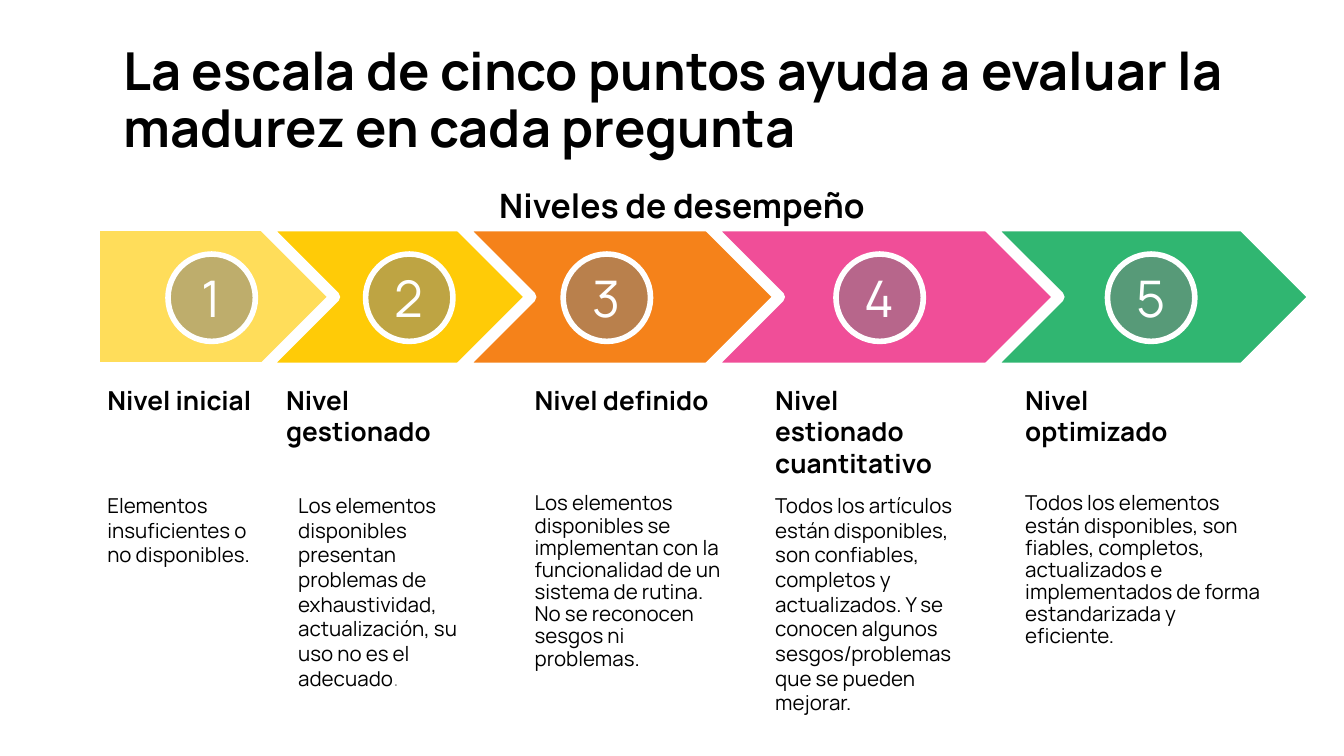
from lxml import etree
from pptx import Presentation
from pptx.dml.color import RGBColor
from pptx.enum.shapes import MSO_SHAPE
from pptx.enum.text import MSO_ANCHOR, PP_ALIGN
from pptx.oxml.ns import qn
from pptx.util import Inches, Pt

FONT = "Manrope"
BLACK = "000000"
WHITE = "FFFFFF"


def color(value):
    return RGBColor.from_string(value)


def add_run(paragraph, text, size, value=BLACK, bold=False):
    run = paragraph.add_run()
    run.text = text
    run.font.name = FONT
    run.font.size = Pt(size)
    run.font.bold = bold
    run.font.color.rgb = color(value)


presentation = Presentation()
presentation.slide_width = Inches(10)
presentation.slide_height = Inches(10 * 9 / 16)
slide = presentation.slides.add_slide(presentation.slide_layouts[6])

arrows = [
    (MSO_SHAPE.RECTANGLE, 0.7, 3.18, "FFCB03", 65),
    (MSO_SHAPE.CHEVRON, 1.96, 2.91, "FFCB07", 100),
    (MSO_SHAPE.CHEVRON, 3.42, 2.41, "F5821A", 100),
    (MSO_SHAPE.CHEVRON, 5.27, 2.66, "F04E98", 100),
    (MSO_SHAPE.CHEVRON, 7.35, 2.43, "30B671", 100),
]
circles = [(MSO_SHAPE.OVAL, left, 0.65, "7F7F7F", 50) for left in (1.25, 2.72, 4.19, 6.22, 8.24)]

for index, (kind, left, width, fill, opacity) in enumerate(arrows + circles):
    is_circle = kind == MSO_SHAPE.OVAL
    top, height, line_width = (1.89, 0.65, 3) if is_circle else (1.68, 1.06, 6)
    shape = slide.shapes.add_shape(kind, Inches(left), Inches(top), Inches(width), Inches(height))
    shape.shadow.inherit = False
    shape.fill.solid()
    shape.fill.fore_color.rgb = color(fill)
    shape.line.color.rgb = color(WHITE)
    shape.line.width = Pt(line_width)
    if opacity < 100:
        fill_color = shape.fill._xPr.find(qn("a:solidFill"))[0]
        etree.SubElement(fill_color, qn("a:alpha")).set("val", str(opacity * 1000))
    if is_circle:
        frame = shape.text_frame
        frame.margin_left = frame.margin_right = Inches(0.1)
        frame.margin_top = frame.margin_bottom = Inches(0.1)
        frame.vertical_anchor = MSO_ANCHOR.MIDDLE
        paragraph = frame.paragraphs[0]
        paragraph.alignment = PP_ALIGN.CENTER
        add_run(paragraph, str(index - len(arrows) + 1), 27, WHITE)

title = slide.shapes.add_textbox(Inches(0.85), Inches(0.34), Inches(8.67), Inches(0.84))
frame = title.text_frame
frame.word_wrap = True
frame.vertical_anchor = MSO_ANCHOR.MIDDLE
frame.margin_left = frame.margin_right = Inches(0.07)
frame.margin_top = frame.margin_bottom = Inches(0.04)
paragraph = frame.paragraphs[0]
paragraph.line_spacing = 0.9
add_run(paragraph, "La escala de cinco puntos ayuda a evaluar la madurez en cada pregunta", 28, bold=True)

heading = slide.shapes.add_textbox(Inches(2.07), Inches(1.33), Inches(6.01), Inches(0.4))
heading.text_frame.word_wrap = True
paragraph = heading.text_frame.paragraphs[0]
paragraph.alignment = PP_ALIGN.CENTER
add_run(paragraph, "Niveles de desempeño", 18, bold=True)

level_names = [
    (0.7, 1.32, 0.57, "Nivel inicial"),
    (2.03, 1.71, 0.57, "Nivel gestionado"),
    (3.88, 1.53, 0.57, "Nivel definido"),
    (5.67, 1.6, 0.81, "Nivel estionado cuantitativo"),
    (7.53, 1.6, 0.57, "Nivel optimizado"),
]
for left, width, height, name in level_names:
    box = slide.shapes.add_textbox(Inches(left), Inches(2.81), Inches(width), Inches(height))
    box.text_frame.word_wrap = True
    add_run(box.text_frame.paragraphs[0], name, 14, bold=True)

descriptions = [
    (0.7, 1.38, 0.84, 1.0, [[("Elementos insuficientes o no disponibles.", BLACK)]]),
    (2.12, 1.6, 1.58, 1.0, [[
        ("Los elementos disponibles presentan problemas de exhaustividad, "
         "actualización, su uso no es el adecuado", BLACK),
        (".", "999999"),
    ]]),
    (3.88, 1.64, 1.79, 0.9, [
        [("Los elementos disponibles se implementan con la funcionalidad "
          "de un sistema de rutina.", BLACK)],
        [("No se reconocen sesgos ni problemas.", BLACK)],
    ]),
    (5.67, 1.74, 1.77, 1.0, [[
        ("Todos los artículos están disponibles, son confiables, completos y actualizados. "
         "Y se conocen algunos sesgos/problemas que se pueden mejorar.", BLACK),
    ]]),
    (7.53, 1.98, 1.45, 0.9, [[
        ("Todos los elementos están disponibles, son fiables, completos, actualizados "
         "e implementados de forma estandarizada y eficiente.", BLACK),
    ]]),
]
for left, width, height, spacing, paragraphs in descriptions:
    box = slide.shapes.add_textbox(Inches(left), Inches(3.62), Inches(width), Inches(height))
    frame = box.text_frame
    frame.word_wrap = True
    for index, runs in enumerate(paragraphs):
        paragraph = frame.add_paragraph() if index else frame.paragraphs[0]
        paragraph.line_spacing = spacing
        for text, value in runs:
            add_run(paragraph, text, 11, value)

presentation.save("out.pptx")
